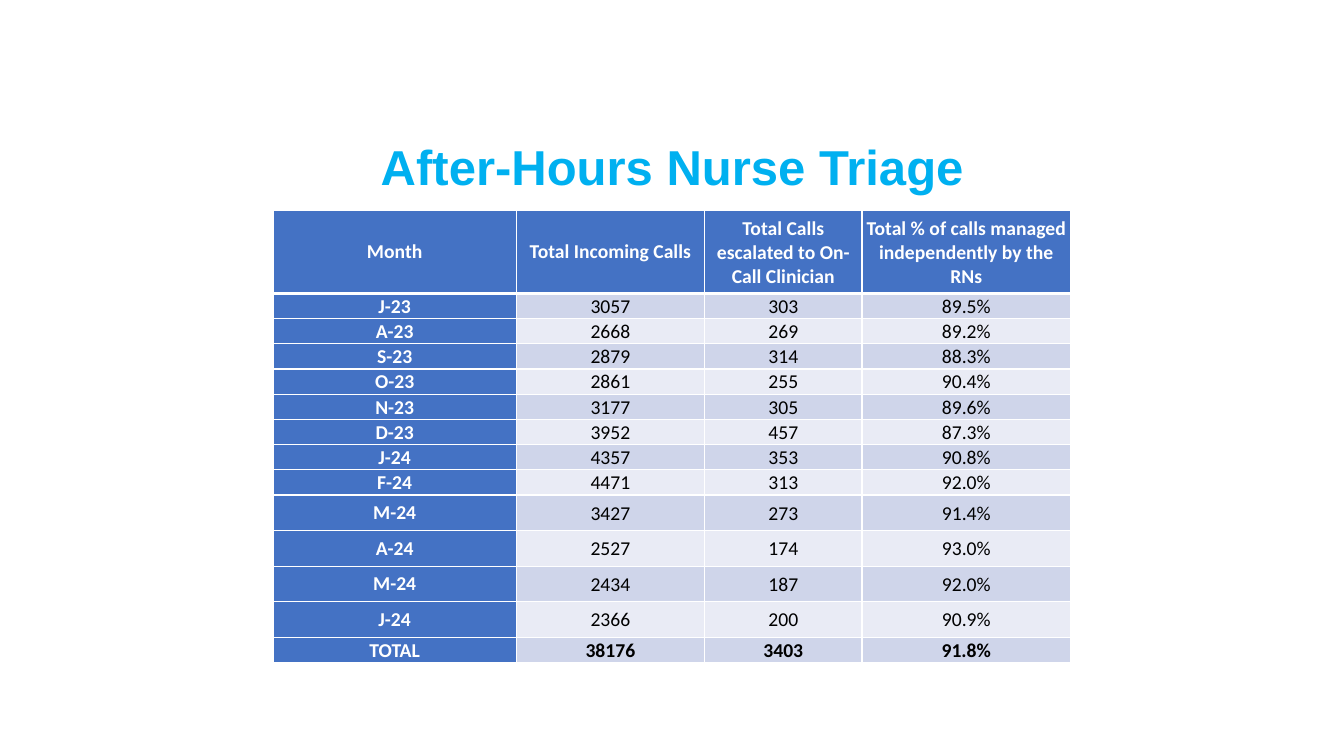
from lxml import etree
from pptx import Presentation
from pptx import util as u
from pptx.dml.color import RGBColor
from pptx.enum import text
from pptx.oxml.ns import qn

COLORS = {"title": "00B0F0", "head": "4472C4", "band_dark": "CFD5EA",
          "band_light": "E9EBF5", "white": "FFFFFF", "black": "000000"}
COLUMNS = [2.41, 1.87, 1.56, 2.07]
ROWS = [0.56] + [0.25] * 8 + [0.34] * 4 + [0.24]
TALL_ROWS = range(9, 13)
TRIAGE = [
    ("Month", "Total Incoming Calls", "Total Calls escalated to On-Call Clinician",
     "Total % of calls managed independently by the RNs"),
    ("J-23", "3057", "303", "89.5%"),
    ("A-23", "2668", "269", "89.2%"),
    ("S-23", "2879", "314", "88.3%"),
    ("O-23", "2861", "255", "90.4%"),
    ("N-23", "3177", "305", "89.6%"),
    ("D-23", "3952", "457", "87.3%"),
    ("J-24", "4357", "353", "90.8%"),
    ("F-24", "4471", "313", "92.0%"),
    ("M-24", "3427", "273", "91.4%"),
    ("A-24", "2527", "174", "93.0%"),
    ("M-24", "2434", "187", "92.0%"),
    ("J-24", "2366", "200", "90.9%"),
    ("TOTAL", "38176", "3403", "91.8%"),
]


def apply(target, formats):
    for name, value in formats.items():
        setattr(target, name, value)


def write(para, words, color, **formats):
    para.alignment = text.PP_ALIGN.CENTER
    span = para.add_run()
    span.text = words
    apply(span.font, formats)
    span.font.color.rgb = RGBColor.from_string(COLORS[color])


def add_borders(cell, widths):
    properties = cell._tc.get_or_add_tcPr()
    for side, points in widths.items():
        line = etree.SubElement(properties, qn(f"a:{side}"), w=str(u.Pt(points)))
        fill = etree.SubElement(line, qn("a:solidFill"))
        etree.SubElement(fill, qn("a:srgbClr"), val=COLORS["white"])


def add_title(page, left, top, width, height):
    box = page.shapes.add_textbox(*map(u.Inches, (left, top, width, height)))
    apply(box.text_frame, {"word_wrap": True,
                           "vertical_anchor": text.MSO_ANCHOR.TOP})
    para = box.text_frame.paragraphs[0]
    para.line_spacing = 0.9
    write(para, "After-Hours Nurse Triage", "title",
          name="Arial", size=u.Pt(35), bold=True)


def fill_cell(cell, words, row, column):
    header, total = row == 0, row == len(TRIAGE) - 1
    label = header or column == 0
    padded = header or (label and row in TALL_ROWS)
    anchor = text.MSO_ANCHOR.BOTTOM if total else text.MSO_ANCHOR.MIDDLE
    apply(cell, {
        "margin_left": u.Inches(0.01),
        "margin_right": u.Inches(0.01),
        "margin_top": u.Inches(0.06 if padded else 0.01),
        "margin_bottom": u.Inches(0.06 if padded else 0),
        "vertical_anchor": anchor,
    })
    # The heavy rule lies between the header and the first month
    add_borders(cell, {"lnL": 1, "lnR": 1, "lnT": 3 if row == 1 else 1,
                       "lnB": 3 if header else 1})
    band = "band_dark" if row % 2 else "band_light"
    cell.fill.solid()
    cell.fill.fore_color.rgb = RGBColor.from_string(COLORS["head" if label else band])
    write(cell.text_frame.paragraphs[0], words, "white" if label else "black",
          name="Calibri", size=u.Pt(14), bold=label or total)


def add_triage_table(page, left, top, width, height):
    frame = page.shapes.add_table(len(ROWS), len(COLUMNS),
                                  *map(u.Inches, (left, top, width, height)))
    table = frame.table
    for column, share in zip(table.columns, COLUMNS):
        column.width = u.Inches(width * share / sum(COLUMNS))
    for row, size in zip(table.rows, ROWS):
        row.height = u.Inches(size)
    frame.height = u.Inches(height)
    for row, record in enumerate(TRIAGE):
        for column, words in enumerate(record):
            fill_cell(table.cell(row, column), words, row, column)


def main():
    deck = Presentation()
    apply(deck, {"slide_width": u.Inches(13.33), "slide_height": u.Inches(7.5)})
    page = deck.slides.add_slide(deck.slide_layouts[6])
    # Heading
    add_title(page, 0.92, 1.37, 11.5, 1.21)
    # Monthly call figures
    add_triage_table(page, 2.71, 2.09, 7.91, 4.47)
    deck.save("out.pptx")


if __name__ == "__main__":
    main()
